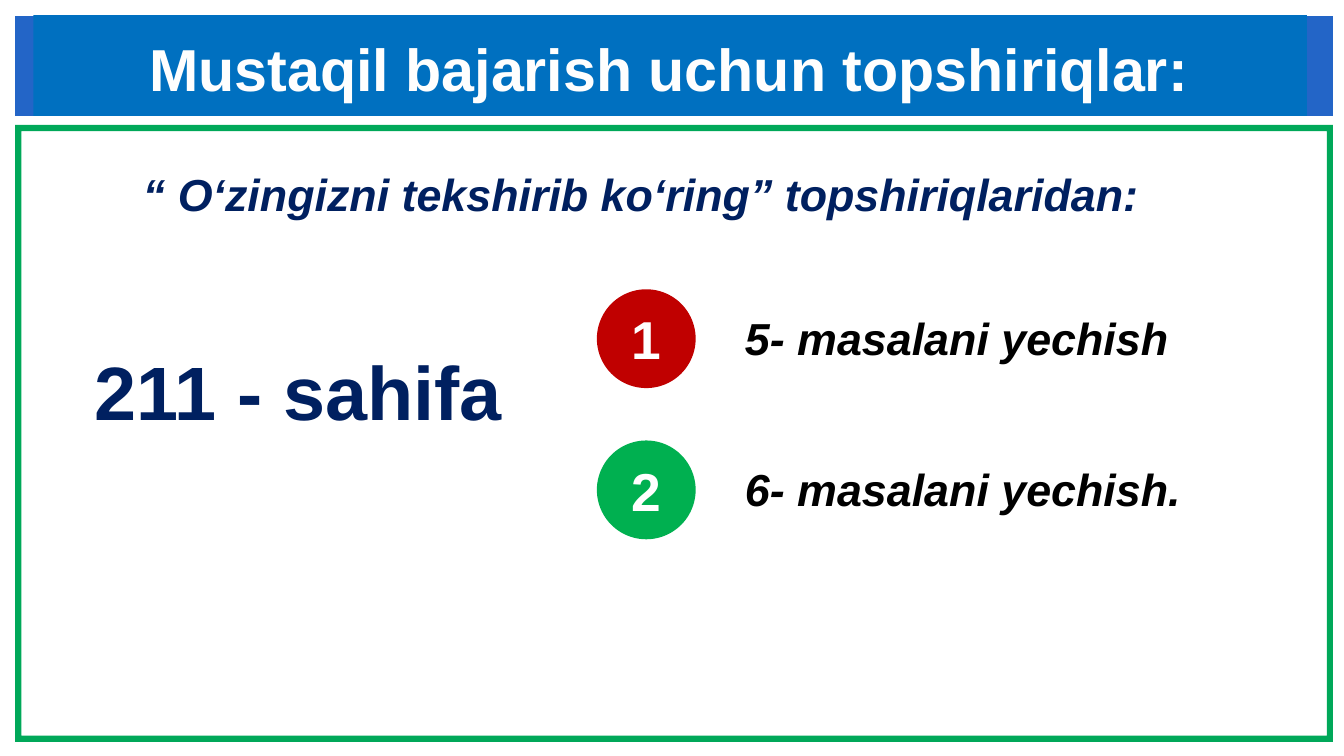
from dataclasses import dataclass, field

from pptx import Presentation
from pptx.dml.color import RGBColor
from pptx.enum.shapes import MSO_SHAPE
from pptx.enum.text import MSO_ANCHOR, PP_ALIGN
from pptx.util import Inches, Pt

RECTANGLE, OVAL, FRAME = MSO_SHAPE.RECTANGLE, MSO_SHAPE.OVAL, MSO_SHAPE.FRAME
TOP, MIDDLE = MSO_ANCHOR.TOP, MSO_ANCHOR.MIDDLE
LEFT, CENTER = PP_ALIGN.LEFT, PP_ALIGN.CENTER

WHITE = RGBColor(0xFF, 0xFF, 0xFF)
OFF_WHITE = RGBColor(0xFE, 0xFE, 0xFE)
BLACK = RGBColor(0x00, 0x00, 0x00)
NAVY = RGBColor(0x00, 0x20, 0x60)
BAND_BLUE = RGBColor(0x23, 0x65, 0xC7)
TITLE_BLUE = RGBColor(0x00, 0x70, 0xC0)
FRAME_GREEN = RGBColor(0x00, 0xA8, 0x59)
RED = RGBColor(0xC0, 0x00, 0x00)
GREEN = RGBColor(0x00, 0xB0, 0x50)

SLIDE_WIDTH, SLIDE_HEIGHT = Inches(13.33), Inches(7.5)
FRAME_THICKNESS = 0.01  # share of the frame's height


@dataclass
class Area:
    """A place in percent of the slide's width and height."""
    left: float
    top: float
    width: float
    height: float

    def lengths(self) -> tuple[int, ...]:
        sizes = (SLIDE_WIDTH, SLIDE_HEIGHT) * 2
        shares = (self.left, self.top, self.width, self.height)
        return tuple(round(size * share / 100) for size, share in zip(sizes, shares))


@dataclass
class Words:
    text: str
    size: float
    color: RGBColor
    italic: bool = False
    align: int = LEFT
    paragraph: dict = field(default_factory=dict)


@dataclass
class Task:
    number: str
    text: str
    color: RGBColor


TASKS = [
    Task("1", "5- masalani yechish", RED),
    Task("2", "6- masalani yechish.", GREEN),
]
TASKS_TOP, TASK_STEP = 38.27, 20


def write(shape, words: Words, anchor: int, **margins: int) -> None:
    frame = shape.text_frame
    frame_format = {"word_wrap": True, "vertical_anchor": anchor, **margins}
    para = frame.paragraphs[0]
    span = para.add_run()
    span.text = words.text
    font_format = {"name": "Arial", "size": Pt(words.size), "bold": True,
                   "italic": words.italic}
    para_format = {"alignment": words.align, **words.paragraph}
    for target, values in ((frame, frame_format), (para, para_format),
                           (span.font, font_format)):
        for name, value in values.items():
            setattr(target, name, value)
    span.font.color.rgb = words.color


def add_filled(page, kind: int, area: Area, color: RGBColor):
    shape = page.shapes.add_shape(kind, *area.lengths())
    shape.shadow.inherit = False
    shape.fill.solid()
    shape.fill.fore_color.rgb = color
    shape.line.fill.background()
    return shape


def add_label(page, area: Area, words: Words) -> None:
    write(page.shapes.add_textbox(*area.lengths()), words, TOP)


def add_header(page) -> None:
    add_filled(page, RECTANGLE, Area(1.13, 2.13, 98.05, 13.2), BAND_BLUE)
    title = add_filled(page, RECTANGLE, Area(2.48, 2, 94.75, 13.33), TITLE_BLUE)
    words = Words("Mustaqil bajarish uchun topshiriqlar:", 42.3, OFF_WHITE,
                  paragraph={"space_before": Pt(2.8)})
    write(title, words, MIDDLE, margin_left=Inches(1.15), margin_right=0,
          margin_top=Inches(0.04), margin_bottom=0)


def add_task(page, task: Task, top: float) -> None:
    circle = add_filled(page, OVAL, Area(44.41, top, 7.35, 13.07), task.color)
    write(circle, Words(task.number, 38.1, WHITE, align=CENTER), MIDDLE)
    add_label(page, Area(54.69, top + 2.2, 36, 8.53),
              Words(task.text, 32, BLACK, italic=True))


def main() -> None:
    deck = Presentation()
    deck.slide_width, deck.slide_height = SLIDE_WIDTH, SLIDE_HEIGHT
    page = deck.slides.add_slide(deck.slide_layouts[6])

    border = add_filled(page, FRAME, Area(1.13, 16.53, 98.05, 81.6), FRAME_GREEN)
    border.adjustments[0] = FRAME_THICKNESS
    add_header(page)
    add_label(page, Area(9.9, 21.33, 77.12, 8.53),
              Words("“ O‘zingizni tekshirib ko‘ring” topshiriqlaridan:", 32, NAVY,
                    italic=True, paragraph={"space_after": Pt(2)}))
    add_label(page, Area(6.3, 44.93, 36.61, 13.47), Words("211 - sahifa", 54, NAVY))
    for index, task in enumerate(TASKS):
        add_task(page, task, TASKS_TOP + index * TASK_STEP)

    deck.save("out.pptx")


if __name__ == "__main__":
    main()
